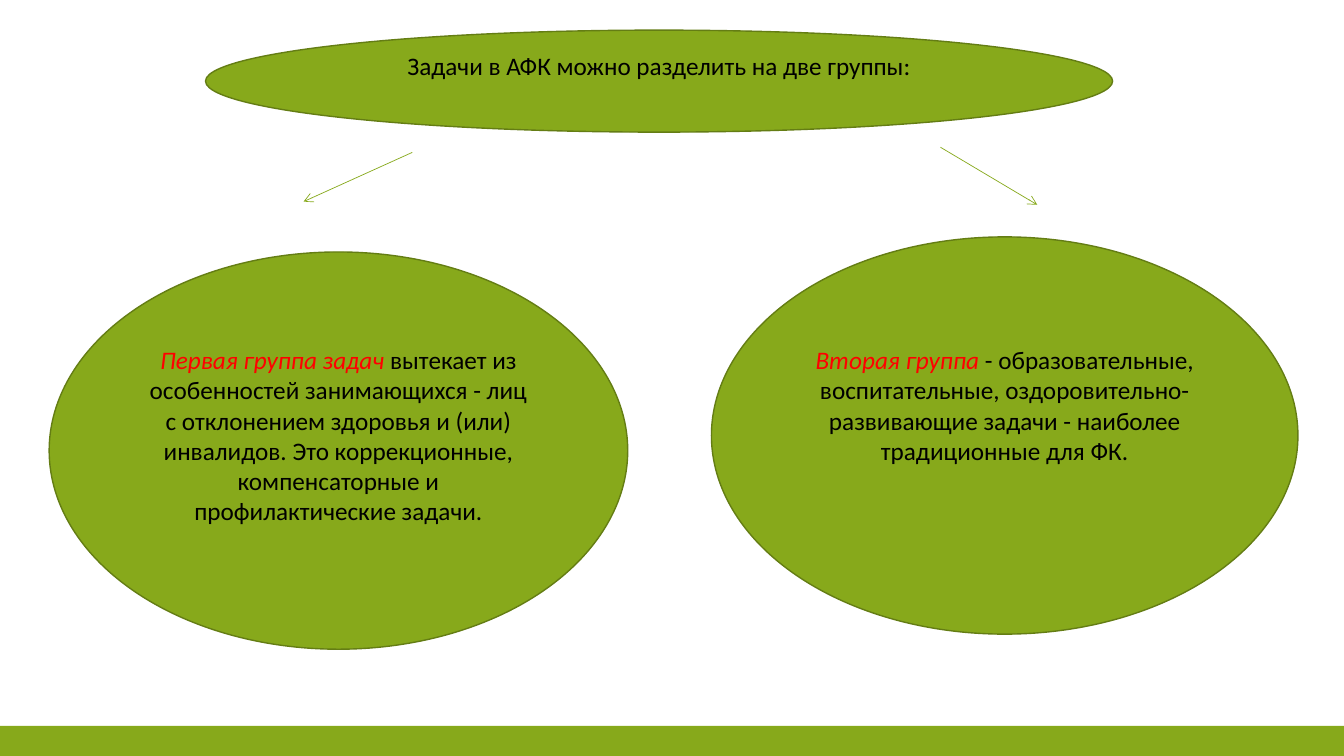
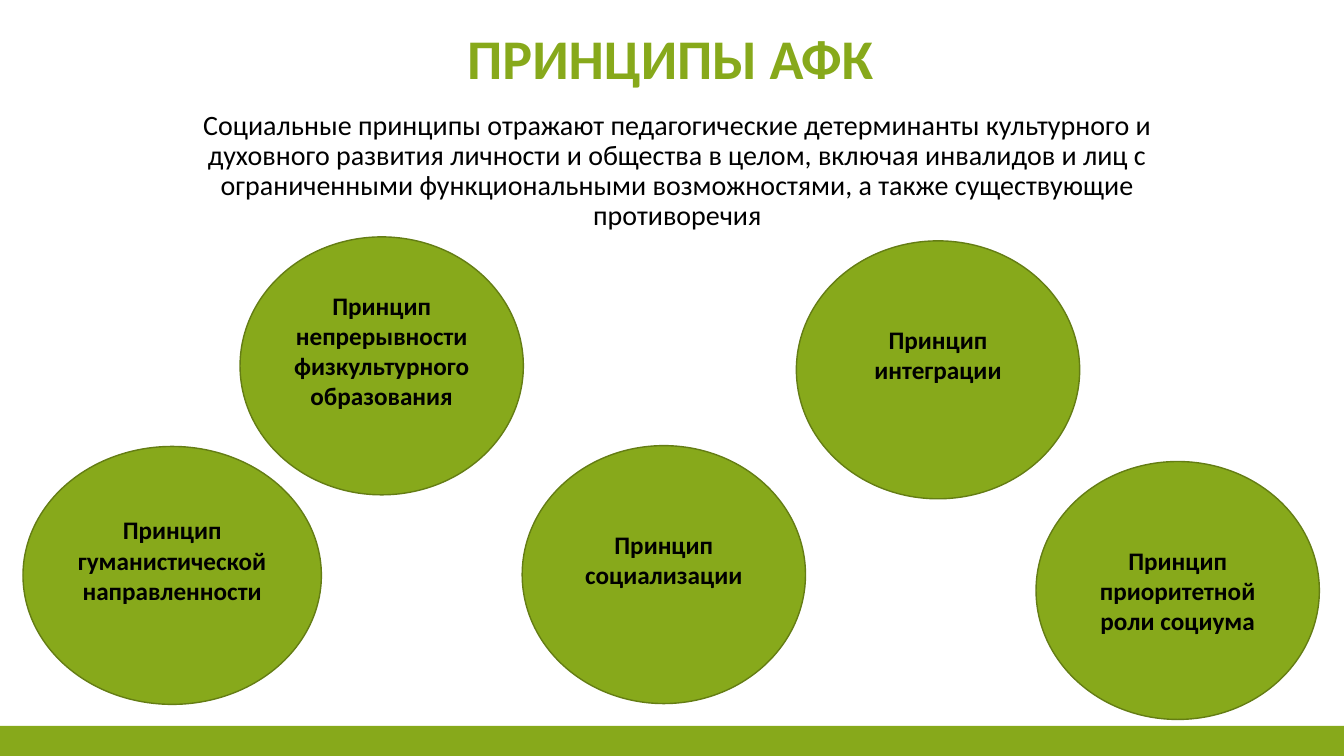
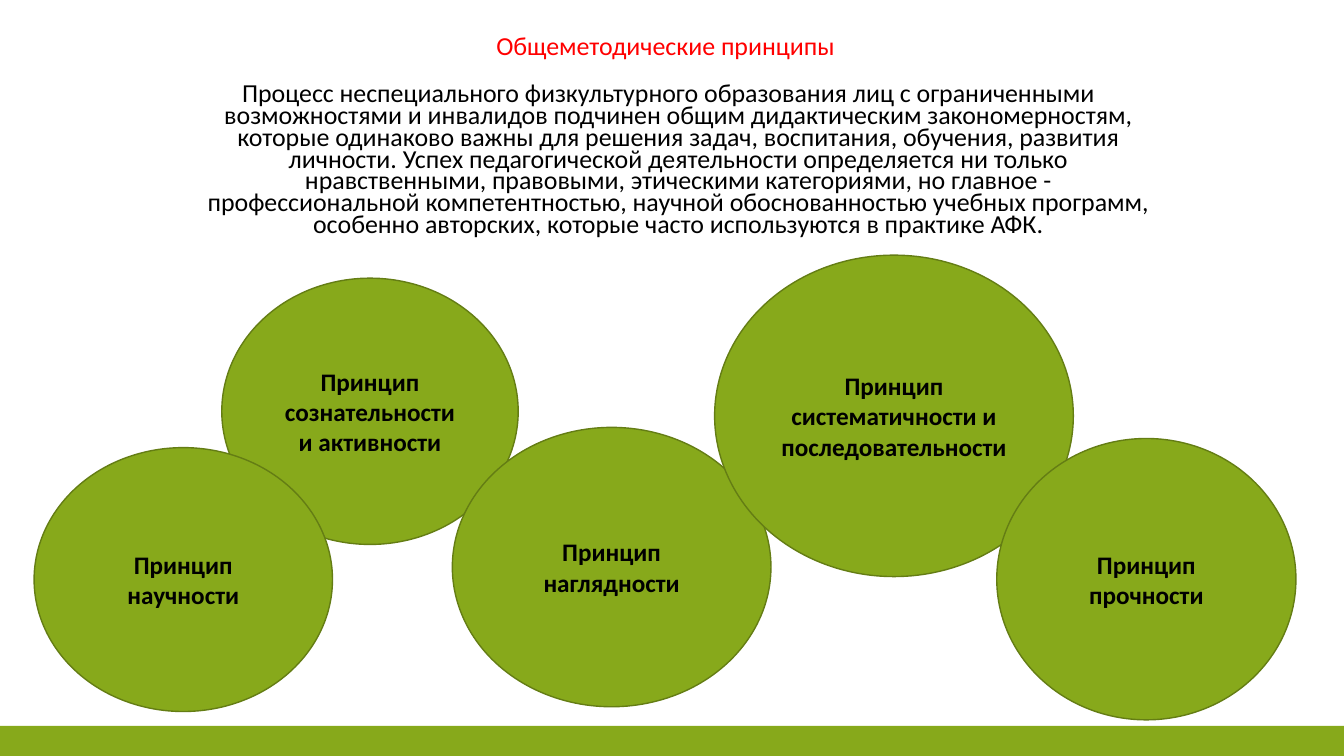
from lxml import etree
from pptx import Presentation
from pptx.dml.color import RGBColor
from pptx.enum.shapes import MSO_CONNECTOR, MSO_SHAPE
from pptx.enum.text import MSO_ANCHOR, MSO_AUTO_SIZE, PP_ALIGN
from pptx.oxml.ns import qn
from pptx.util import Cm, Pt

OVAL, RECT = MSO_SHAPE.OVAL, MSO_SHAPE.RECTANGLE
STRAIGHT = MSO_CONNECTOR.STRAIGHT
MIDDLE, BOTTOM = MSO_ANCHOR.MIDDLE, MSO_ANCHOR.BOTTOM
CENTER = PP_ALIGN.CENTER
NO_FIT = MSO_AUTO_SIZE.NONE

FONT = "Calibri"
COLORS = {"green": "87A91B", "outline": "647D14", "black": "000000", "red": "FF0000"}
SLIDE_W, SLIDE_H, BAND_H = 33.87, 19.05, 0.76
LINE_H = 0.77  # height of one 18 pt line, cm
INSET = 0.13
TITLE_LAYOUT, BLANK_LAYOUT = 1, 6

# Content: boxes are (left, top, width, height) in cm;
# an oval is (box, lines kept free below the text, (text, style) runs)
PLAIN = {"color": "black"}
BOLD = {"color": "black", "bold": True}
KEY = {"color": "red", "italic": True}

TASK_OVALS = [
    ((5.18, 0.76, 22.86, 2.57), 1, [("Задачи в АФК можно разделить на две группы:", PLAIN)]),
    ((1.24, 6.35, 14.58, 10.01), 1, [
        ("Первая группа задач", KEY),
        (" вытекает из особенностей занимающихся - лиц с отклонением здоровья и (или) "
         "инвалидов. Это коррекционные, компенсаторные и профилактические задачи.", PLAIN)]),
    ((17.93, 5.97, 14.78, 10.01), 2, [
        ("Вторая группа", KEY),
        (" - образовательные, воспитательные, оздоровительно-развивающие задачи - "
         "наиболее традиционные для ФК.", PLAIN)]),
]
TASK_ARROWS = [(10.39, 3.84, 7.65, 5.08), (23.7, 3.71, 26.14, 5.16)]

SOCIAL_TITLE = "ПРИНЦИПЫ АФК"
SOCIAL_TITLE_BOX = (4.19, 0.58, 25.4, 1.85)
SOCIAL_BODY_BOX = (3.99, 2.67, 25.4, 3.4)
# Body paragraphs: (text, colour, first-line indent in cm)
SOCIAL_BODY = [
    ("Социальные принципы отражают педагогические детерминанты культурного и духовного "
     "развития личности и общества в целом, включая инвалидов и лиц с ограниченными "
     "функциональными возможностями, а также существующие противоречия", "black", 0),
]
SOCIAL_OVALS = [
    ((0.58, 11.25, 7.52, 6.5), 1, [("Принцип гуманистической направленности", BOLD)]),
    ((6.05, 5.97, 7.14, 6.5), 1, [("Принцип непрерывности физкультурного образования", BOLD)]),
    ((13.16, 11.23, 7.14, 6.5), 1, [("Принцип социализации", BOLD)]),
    ((20.07, 6.07, 7.14, 6.5), 1, [("Принцип интеграции", BOLD)]),
    ((26.11, 11.63, 7.14, 6.5), 0, [("Принцип приоритетной роли социума", BOLD)]),
]

METHOD_BODY_BOX = (4.01, 0.84, 25.4, 5.84)
METHOD_BODY = [
    ("Общеметодические принципы", "red", -0.64),
    ("Процесс неспециального физкультурного образования лиц с ограниченными возможностями "
     "и инвалидов подчинен общим дидактическим закономерностям, которые одинаково важны "
     "для решения задач, воспитания, обучения, развития личности. Успех педагогической "
     "деятельности определяется ни только нравственными, правовыми, этическими категориями, "
     "но главное - профессиональной компетентностью, научной обоснованностью учебных "
     "программ, особенно авторских, которые часто используются в практике АФК.",
     "black", -0.5),
]
METHOD_OVALS = [
    ((5.59, 7.01, 7.47, 6.71), 0, [("Принцип сознательности и активности", BOLD)]),
    ((0.86, 11.28, 7.52, 6.65), 0, [("Принцип научности", BOLD)]),
    ((11.4, 10.77, 8.03, 7.04), 0, [("Принцип наглядности", BOLD)]),
    ((18.01, 6.43, 9.04, 8.1), 0, [("Принцип систематичности и последовательности", BOLD)]),
    ((25.12, 11.05, 7.54, 7.09), 0, [("Принцип прочности", BOLD)]),
]


def rgb(name):
    return RGBColor.from_string(COLORS[name])


def add_run(paragraph, text, size, color, bold=False, italic=False):
    run = paragraph.add_run()
    run.text = text
    font = run.font
    font.name, font.size, font.bold, font.italic = FONT, Pt(size), bold, italic
    font.color.rgb = rgb(color)


def add_filled(slide, kind, box):
    shape = slide.shapes.add_shape(kind, *map(Cm, box))
    shape.shadow.inherit = False
    shape.fill.solid()
    shape.fill.fore_color.rgb = rgb("green")
    return shape


def add_ovals(slide, ovals):
    for box, free_lines, runs in ovals:
        oval = add_filled(slide, OVAL, box)
        oval.line.color.rgb = rgb("outline")
        oval.line.width = Pt(1)
        frame = oval.text_frame
        frame.word_wrap = True
        frame.vertical_anchor = MIDDLE
        frame.margin_bottom = Cm(INSET + free_lines * LINE_H)
        paragraph = frame.paragraphs[0]
        paragraph.alignment = CENTER
        for text, style in runs:
            add_run(paragraph, text, 18, **style)


def add_arrow(slide, ends):
    arrow = slide.shapes.add_connector(STRAIGHT, *map(Cm, ends))
    arrow.line.color.rgb = rgb("green")
    arrow.line.width = Pt(0.5)
    etree.SubElement(arrow.line._get_or_add_ln(), qn("a:tailEnd"), type="arrow")
    etree.SubElement(arrow._element.spPr, qn("a:effectLst"))


def place(holder, box):
    holder.left, holder.top, holder.width, holder.height = map(Cm, box)
    holder.text_frame.auto_size = NO_FIT
    return holder.text_frame


def fill_title(slide, text, box):
    frame = place(slide.shapes.title, box)
    frame.vertical_anchor = BOTTOM
    heading = frame.paragraphs[0]
    heading.alignment = CENTER
    heading.line_spacing = 0.9
    add_run(heading, text, 40, "green", bold=True)


def fill_body(slide, paragraphs, box, size, spacing):
    frame = place(slide.placeholders[1], box)
    for i, (text, color, indent) in enumerate(paragraphs):
        paragraph = frame.add_paragraph() if i else frame.paragraphs[0]
        paragraph.alignment = CENTER
        paragraph.line_spacing = spacing
        paragraph.space_before = Pt(18)
        props = paragraph._p.get_or_add_pPr()
        props.set("marL", str(Cm(0.76)))
        props.set("indent", str(Cm(indent)))
        etree.SubElement(props, qn("a:buNone"))
        add_run(paragraph, text, size, color)


def add_master_band(prs, slide):
    """Draw the bottom band and move it to the master, behind everything."""
    band = add_filled(slide, RECT, (0, SLIDE_H - BAND_H, SLIDE_W, BAND_H))
    band.line.fill.background()
    prs.slide_master.shapes._spTree.insert(2, band._element)


def main():
    prs = Presentation()
    prs.slide_width, prs.slide_height = Cm(SLIDE_W), Cm(SLIDE_H)
    layouts = prs.slide_layouts

    # Two groups of tasks
    tasks = prs.slides.add_slide(layouts[BLANK_LAYOUT])
    add_master_band(prs, tasks)
    add_ovals(tasks, TASK_OVALS)
    for ends in TASK_ARROWS:
        add_arrow(tasks, ends)

    # Social principles
    social = prs.slides.add_slide(layouts[TITLE_LAYOUT])
    fill_title(social, SOCIAL_TITLE, SOCIAL_TITLE_BOX)
    fill_body(social, SOCIAL_BODY, SOCIAL_BODY_BOX, 20, 0.9)
    add_ovals(social, SOCIAL_OVALS)

    # General methodical principles
    method = prs.slides.add_slide(layouts[TITLE_LAYOUT])
    unused_title = method.shapes.title._element
    unused_title.getparent().remove(unused_title)
    fill_body(method, METHOD_BODY, METHOD_BODY_BOX, 18.5, 0.7)
    add_ovals(method, METHOD_OVALS)

    prs.save("out.pptx")


if __name__ == "__main__":
    main()
